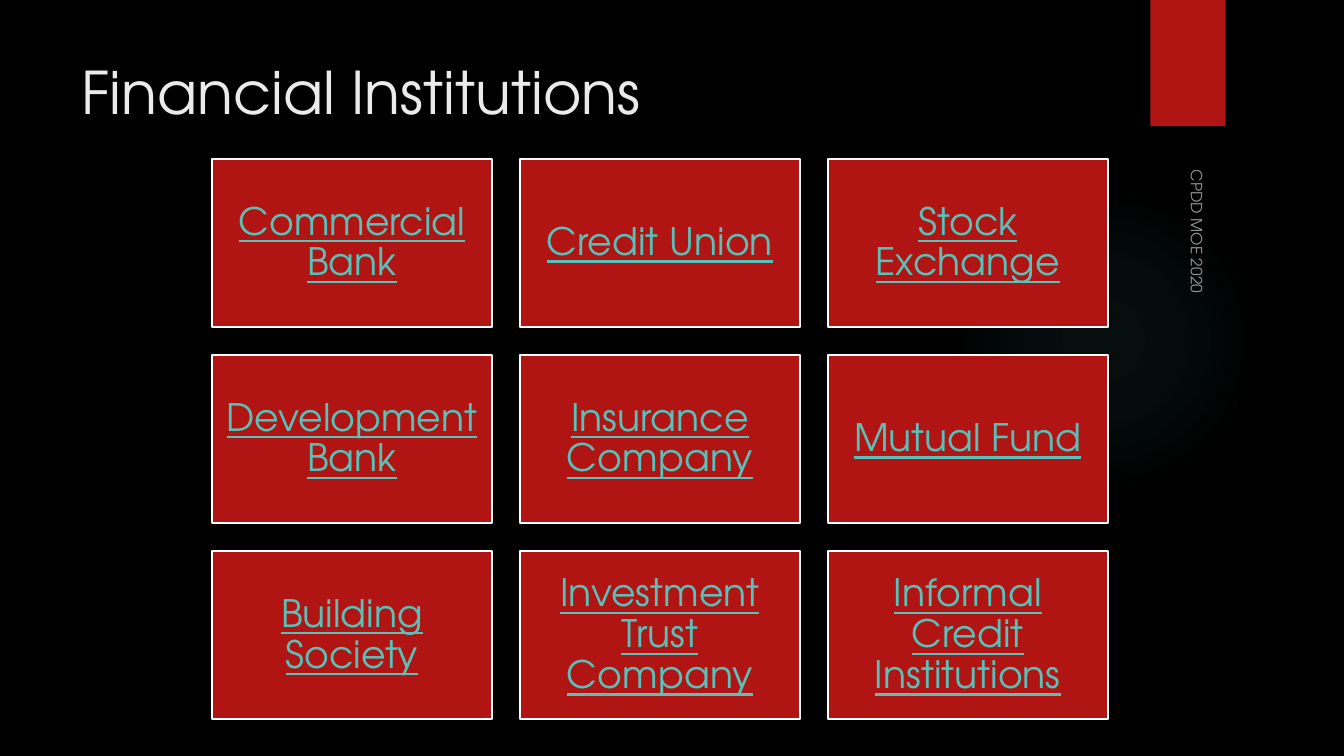
from lxml.etree import SubElement
from pptx import Presentation
from pptx.dml.color import RGBColor
from pptx.enum.shapes import MSO_SHAPE
from pptx.enum.text import MSO_ANCHOR, PP_ALIGN
from pptx.oxml import parse_xml
from pptx.oxml.ns import nsdecls, qn
from pptx.util import Cm, Pt

BLACK = RGBColor(0x00, 0x00, 0x00)
WHITE = RGBColor(0xFF, 0xFF, 0xFF)
OFF_WHITE = RGBColor(0xEB, 0xEB, 0xEB)
RED = RGBColor(0xB0, 0x15, 0x13)
TEAL = RGBColor(0x58, 0xC1, 0xBA)
GLOW_TEAL = RGBColor(0x50, 0xB9, 0xC1)
FONT = "TeX Gyre Adventor"


def write(frame, text, *, size, color, anchor=MSO_ANCHOR.TOP, align=PP_ALIGN.LEFT,
          underline=False, spacing=1.0, inset=None, opacity=None):
    frame.word_wrap = True
    frame.vertical_anchor = anchor
    if inset is not None:
        frame.margin_left = frame.margin_right = inset
        frame.margin_top = frame.margin_bottom = inset
    paragraph = frame.paragraphs[0]
    paragraph.alignment = align
    paragraph.line_spacing = spacing
    run = paragraph.add_run()
    run.text = text
    run.font.name = FONT
    run.font.size = Pt(size)
    run.font.underline = underline
    run.font.color.rgb = color
    if opacity is not None:
        tint = run.font.fill._xPr.find(qn("a:solidFill"))[0]
        SubElement(tint, qn("a:alpha"), val=str(opacity * 1000))


prs = Presentation()
prs.slide_width, prs.slide_height = Cm(33.87), Cm(19.05)
slide = prs.slides.add_slide(prs.slide_layouts[6])
slide.background.fill.solid()
slide.background.fill.fore_color.rgb = BLACK
shapes = slide.shapes

glow = shapes.add_shape(MSO_SHAPE.OVAL, Cm(23.9), Cm(4.65), Cm(7.82), Cm(7.82))
glow.shadow.inherit = False
glow.line.fill.background()
stops = "".join(
    f'<a:gs pos="{position * 1000}"><a:srgbClr val="{GLOW_TEAL}">'
    f'<a:alpha val="{opacity * 1000}"/></a:srgbClr></a:gs>'
    for position, opacity in ((0, 7), (36, 6), (69, 0))
)
glow.element.spPr.find(qn("a:prstGeom")).addnext(parse_xml(
    f'<a:gradFill {nsdecls("a")}><a:gsLst>{stops}</a:gsLst><a:path path="circle">'
    '<a:fillToRect l="50000" t="50000" r="50000" b="50000"/></a:path></a:gradFill>'
))

ribbon = shapes.add_shape(MSO_SHAPE.RECTANGLE, Cm(28.99), 0, Cm(1.9), Cm(3.18))
ribbon.shadow.inherit = False
ribbon.fill.solid()
ribbon.fill.fore_color.rgb = RED
ribbon.line.fill.background()

heading = shapes.add_textbox(Cm(1.8), Cm(1.27), Cm(26.14), Cm(2.29))
write(heading.text_frame, "Financial Institutions", size=42, color=OFF_WHITE)

institutions = [
    ["Commercial Bank", "Credit Union", "Stock Exchange"],
    ["Development Bank", "Insurance Company", "Mutual Fund"],
    ["Building Society", "Investment Trust Company", "Informal Credit Institutions"],
]
tile_width, tile_height, gap = Cm(7.06), Cm(4.24), Cm(0.7)
for row, names in enumerate(institutions):
    for column, name in enumerate(names):
        tile = shapes.add_shape(
            MSO_SHAPE.RECTANGLE,
            Cm(5.34) + column * (tile_width + gap),
            Cm(4.01) + row * (tile_height + gap),
            tile_width, tile_height,
        )
        tile.shadow.inherit = False
        tile.fill.solid()
        tile.fill.fore_color.rgb = RED
        tile.line.color.rgb = WHITE
        tile.line.width = Pt(1.5)
        write(tile.text_frame, name, size=27, color=TEAL, anchor=MSO_ANCHOR.MIDDLE,
              align=PP_ALIGN.CENTER, underline=True, spacing=0.9, inset=Cm(0.28))

footer = shapes.add_textbox(Cm(24.87), Cm(8.97), Cm(10.72), Cm(0.84))
footer.rotation = 90
write(footer.text_frame, "CPDD MOE 2020", size=11, color=WHITE,
      anchor=MSO_ANCHOR.BOTTOM, opacity=60)

prs.save("out.pptx")
